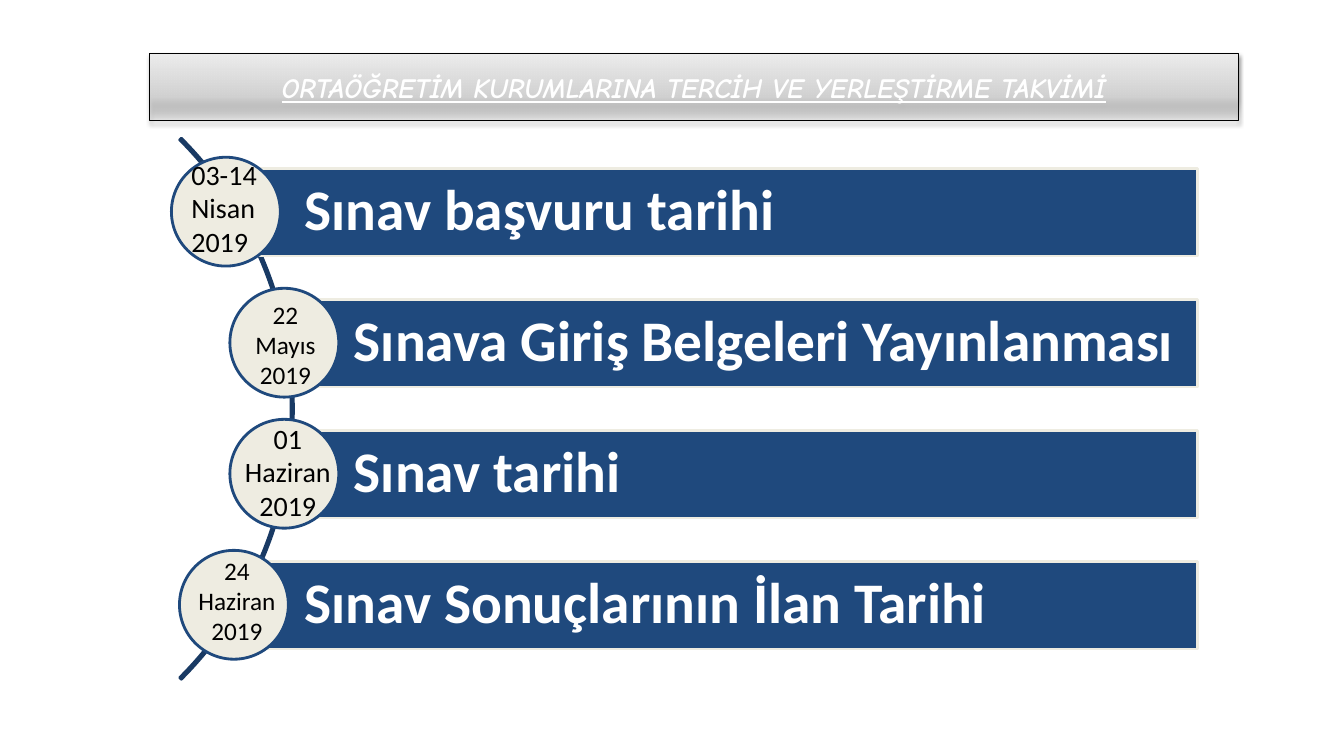
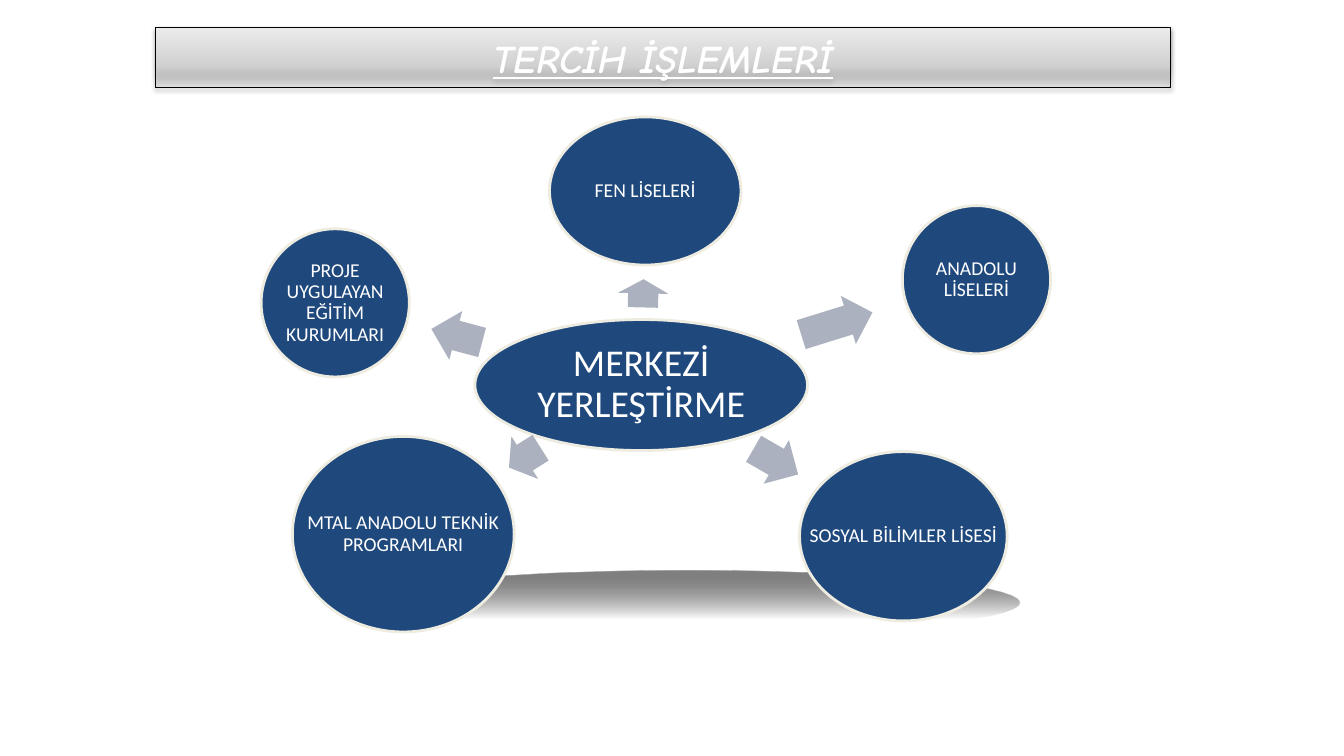
import lxml.etree
import pptx
import pptx.dml.color
import pptx.enum.shapes
import pptx.enum.text
import pptx.oxml
import pptx.oxml.ns
import pptx.util

Inches = pptx.util.Inches
Pt = pptx.util.Pt
RGBColor = pptx.dml.color.RGBColor
SHAPE = pptx.enum.shapes.MSO_SHAPE
ALIGN = pptx.enum.text.PP_ALIGN
MIDDLE = pptx.enum.text.MSO_ANCHOR.MIDDLE
NO_AUTOFIT = pptx.enum.text.MSO_AUTO_SIZE.NONE

NAVY = RGBColor(0x1F, 0x49, 0x7D)
DARK_NAVY = RGBColor(0x19, 0x3A, 0x64)
CREAM = RGBColor(0xEE, 0xEC, 0xE1)
ARROW_GREY = RGBColor(0xAC, 0xB1, 0xBF)
SILVER = RGBColor(0xBD, 0xBD, 0xBD)
LIGHT_SILVER = RGBColor(0xD1, 0xD1, 0xD1)
PALE_SILVER = RGBColor(0xEE, 0xEE, 0xEE)
MID_GREY = RGBColor(0x80, 0x80, 0x80)
CHARCOAL = RGBColor(0x2B, 0x2B, 0x2B)
WHITE = RGBColor(0xFF, 0xFF, 0xFF)
BLACK = RGBColor(0x00, 0x00, 0x00)

BODY_FONT = "Calibri"
TITLE_FONT = "Comic Neue"
TITLE_STOPS = [(0, SILVER, 7), (35, LIGHT_SILVER, 100), (100, PALE_SILVER, 100)]
FLOOR_STOPS = [(11, MID_GREY, 100), (76, CHARCOAL, 0)]
DRAWING_NS = pptx.oxml.ns.nsdecls("a")

EXAM_DATES = [
    ("Sınav başvuru tarihi", "03-14 Nisan 2019", 20, ALIGN.LEFT,
     0, 0.63, (0.1, -0.05, 1.16, 1.11)),
    ("Sınava Giriş Belgeleri Yayınlanması", "22 Mayıs 2019", 18, ALIGN.CENTER,
     0.58, 1.12, (0.11, 0.06, 0.88, 1.01)),
    ("Sınav tarihi", "01 Haziran 2019", 20, ALIGN.CENTER,
     0.58, 1.12, (-0.01, -0.03, 1.17, 1.11)),
    ("Sınav Sonuçlarının İlan Tarihi", "24 Haziran 2019", 18, ALIGN.CENTER,
     0.08, 0.63, (0.02, 0, 1.1, 1.01)),
]

SCHOOLS = [
    ("FEN LİSELERİ", (2.86, 0, 1.9, 1.47), (3.65, 1.5, 0.28), 271.3),
    ("ANADOLU\vLİSELERİ", (6.36, 0.88, 1.47, 1.47), (5.34, 1.8, 0.74), 342.7),
    ("SOSYAL BİLİMLER LİSESİ", (5.34, 3.32, 2.06, 1.68), (4.85, 3.17, 0.51), 30),
    ("MTAL ANADOLU TEKNİK\vPROGRAMLARI", (0.31, 3.17, 2.2, 1.94),
     (2.43, 3.13, 0.37), 147.8),
    ("PROJE\vUYGULAYAN\vEĞİTİM\vKURUMLARI", (0, 1.11, 1.47, 1.47),
     (1.68, 1.92, 0.52), 194.9),
]


def place(left, top, box):
    """Turn a box relative to a corner into lengths on the slide."""
    x, y, width, height = box
    return Inches(left + x), Inches(top + y), Inches(width), Inches(height)


def add_figure(slide, preset, bounds, fill=None, line=None):
    """Add a flat preset shape with an optional fill and outline."""
    figure = slide.shapes.add_shape(preset, *bounds)
    figure.shadow.inherit = False
    if fill is None:
        figure.fill.background()
    else:
        figure.fill.solid()
        figure.fill.fore_color.rgb = fill
    if line is None:
        figure.line.fill.background()
    else:
        figure.line.color.rgb = line
        figure.line.width = Pt(2)
    return figure


def set_gradient(figure, stops, angle):
    """Fill a figure with a linear gradient of (position, colour, opacity) stops."""
    figure.fill.background()
    marks = "".join(
        f'<a:gs pos="{position * 1000}"><a:srgbClr val="{colour}">'
        f'<a:alpha val="{opacity * 1000}"/></a:srgbClr></a:gs>'
        for position, colour, opacity in stops)
    gradient = pptx.oxml.parse_xml(
        f'<a:gradFill {DRAWING_NS} rotWithShape="1"><a:gsLst>{marks}</a:gsLst>'
        f'<a:lin ang="{angle * 60000}" scaled="0"/></a:gradFill>')
    properties = figure._element.spPr
    properties.replace(properties.find(pptx.oxml.ns.qn("a:noFill")), gradient)


def write(figure, text, size, color, align, font=BODY_FONT, spacing=None):
    """Write one paragraph and return its font settings, run by run."""
    figure.text_frame.text = text
    paragraph = figure.text_frame.paragraphs[0]
    paragraph.alignment = align
    if spacing:
        paragraph.line_spacing = spacing
    for run in paragraph.runs:
        run.font.name = font
        run.font.size = Pt(size)
        run.font.color.rgb = color
    return [run.font for run in paragraph.runs]


def set_margins(frame, left, other):
    """Set the left inset and the three other insets in inches."""
    frame.margin_left = Inches(left)
    frame.margin_top = frame.margin_right = frame.margin_bottom = Inches(other)


def add_title(deck, text, size, box):
    """Add a title-only slide whose title sits in a rounded silver band."""
    slide = deck.slides.add_slide(deck.slide_layouts[5])
    title = slide.shapes.title
    title.left, title.top, title.width, title.height = place(0, 0, box)
    properties = title._element.spPr
    properties.append(pptx.oxml.parse_xml(
        f'<a:prstGeom {DRAWING_NS} prst="roundRect"><a:avLst/></a:prstGeom>'))
    set_gradient(title, TITLE_STOPS, 270)
    title.line.color.rgb = BLACK
    title.line.width = Pt(0.75)
    properties.append(pptx.oxml.parse_xml(
        f'<a:effectLst {DRAWING_NS}><a:outerShdw blurRad="40000" dist="20000" '
        f'dir="5400000" rotWithShape="0"><a:srgbClr val="{BLACK}">'
        '<a:alpha val="38000"/></a:srgbClr></a:outerShdw></a:effectLst>'))
    title.text_frame.auto_size = NO_AUTOFIT
    title.text_frame.vertical_anchor = MIDDLE
    for font in write(title, text, size, WHITE, ALIGN.CENTER, TITLE_FONT):
        font.bold = font.italic = font.underline = True
    return slide


def add_timeline(slide, left, top, width):
    """Add the curve and one bar, circle and date for each exam step."""
    curve = add_figure(slide, SHAPE.BLOCK_ARC,
                       place(left, top, (-6.38, -1.3, 7.59, 7.59)), line=DARK_NAVY)
    curve.adjustments[0] = 189
    curve.adjustments[1] = 27
    curve.adjustments[2] = 0.003

    for row, step in enumerate(EXAM_DATES):
        event, date, size, align, circle_x, bar_x, date_box = step
        row_top = top + 1.3 * row
        bar = add_figure(slide, SHAPE.RECTANGLE,
                         place(left, row_top, (bar_x, 0.11, width - bar_x, 0.87)),
                         NAVY, CREAM)
        set_margins(bar.text_frame, 0.69, 0.11)
        bar.text_frame.vertical_anchor = MIDDLE
        for font in write(bar, event, 41, WHITE, ALIGN.LEFT, spacing=0.9):
            font.bold = True
        add_figure(slide, SHAPE.OVAL,
                   place(left, row_top, (circle_x, 0, 1.08, 1.08)), CREAM, NAVY)
        date_label = slide.shapes.add_textbox(
            *place(left + circle_x, row_top, date_box))
        date_label.text_frame.word_wrap = True
        write(date_label, date, size, BLACK, align)


def add_oval(slide, text, size, bounds):
    """Add a navy oval with a centred label."""
    oval = add_figure(slide, SHAPE.OVAL, bounds, NAVY, CREAM)
    set_margins(oval.text_frame, 0.02, 0.02)
    oval.text_frame.word_wrap = False
    oval.text_frame.vertical_anchor = MIDDLE
    write(oval, text, size, WHITE, ALIGN.CENTER, spacing=0.9)


def add_school_wheel(slide, left, top):
    """Add the central oval with arrows to the school types around it."""
    floor = add_figure(slide, SHAPE.OVAL, place(left, top, (0.94, 4.5, 6.58, 0.63)))
    set_gradient(floor, FLOOR_STOPS, 90)
    add_oval(slide, "MERKEZİ\vYERLEŞTİRME", 27, place(left, top, (2.12, 2.01, 3.3, 1.3)))
    for school, oval_box, (arrow_x, arrow_y, length), angle in SCHOOLS:
        arrow = add_figure(slide, SHAPE.RIGHT_ARROW,
                           place(left, top, (arrow_x, arrow_y, length, 0.5)), ARROW_GREY)
        arrow.adjustments[0] = 0.6
        arrow.adjustments[1] = 0.5
        arrow.rotation = angle
        add_oval(slide, school, 14, place(left, top, oval_box))


def main():
    """Build both slides and save the deck."""
    deck = pptx.Presentation()
    deck.slide_width = Inches(13.33)
    deck.slide_height = Inches(7.5)
    calendar = add_title(deck, "ORTAÖĞRETİM KURUMLARINA TERCİH VE YERLEŞTİRME TAKVİMİ",
                         20, (1.48, 0.53, 10.8, 0.67))
    add_timeline(calendar, 1.7, 1.56, 10.18)
    choices = add_title(deck, "TERCİH İŞLEMLERİ", 28, (1.54, 0.27, 10.07, 0.6))
    add_school_wheel(choices, 2.59, 1.16)
    deck.save("out.pptx")


if __name__ == "__main__":
    main()
